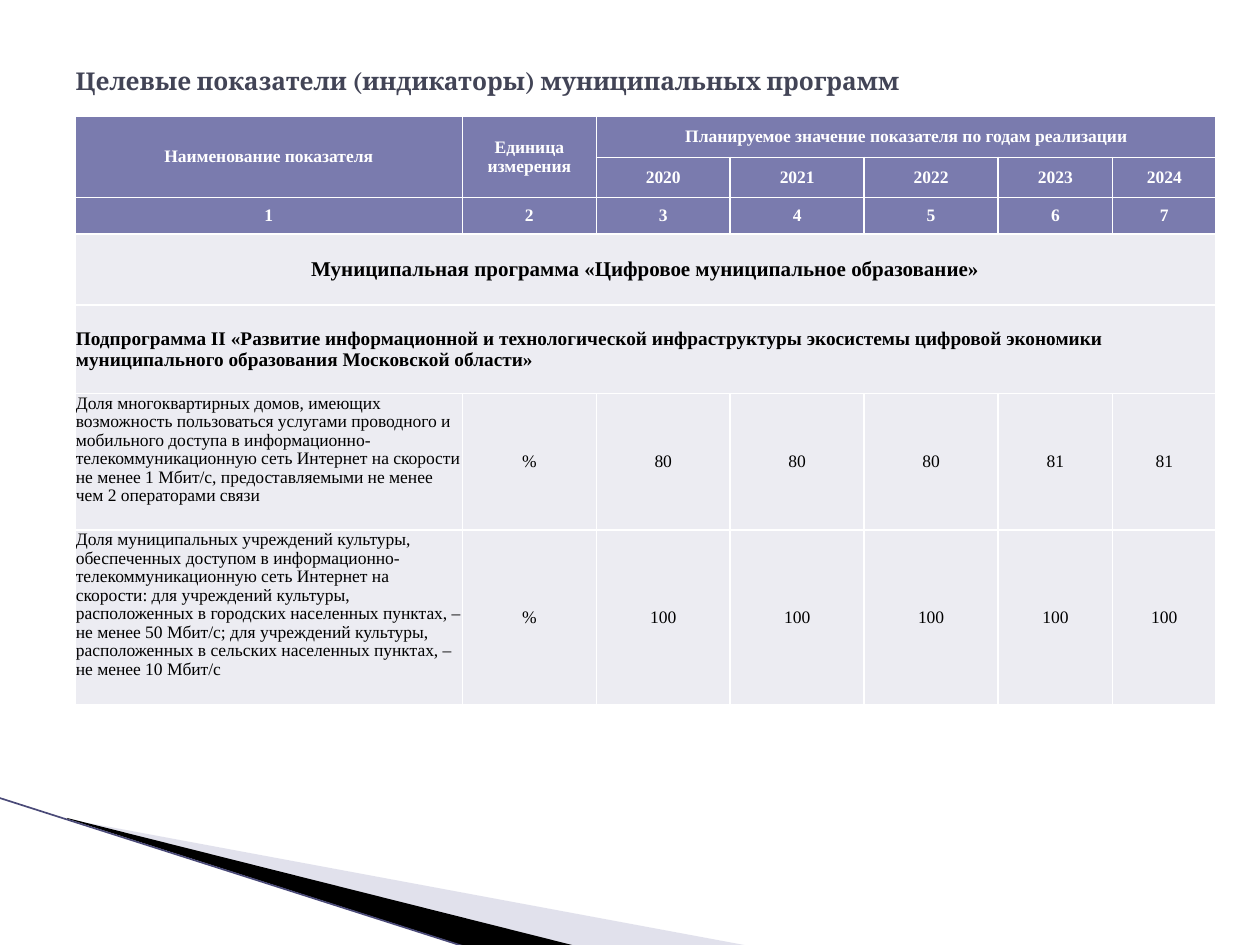
from lxml.etree import SubElement
from pptx import Presentation
from pptx.dml.color import RGBColor
from pptx.enum.shapes import MSO_CONNECTOR
from pptx.enum.text import MSO_ANCHOR as Anchor, MSO_AUTO_SIZE as AutoSize, PP_ALIGN as Align
from pptx.oxml import parse_xml
from pptx.oxml.ns import nsdecls, qn
from pptx.util import Cm, Pt

WHITE = RGBColor(0xFF, 0xFF, 0xFF)
BLACK = RGBColor(0x00, 0x00, 0x00)
TITLE_GREY = RGBColor(0x42, 0x44, 0x56)
HEADER_VIOLET = RGBColor(0x7A, 0x7B, 0xAE)
BODY_GREY = RGBColor(0xEC, 0xEC, 0xF2)
WEDGE_LILAC = RGBColor(0xB6, 0xB6, 0xD1)
EDGE_VIOLET = RGBColor(0x4A, 0x4A, 0x78)


def write(frame, text, size=10, face="Times New Roman", color=BLACK, bold=False,
          align=Align.LEFT, spacing=0.96):
    paragraph = frame.paragraphs[0]
    paragraph.alignment = align
    paragraph.line_spacing = spacing
    run = paragraph.add_run()
    run.text = text
    run.font.size = Pt(size)
    run.font.name = face
    run.font.bold = bold
    run.font.color.rgb = color


prs = Presentation()
prs.slide_width, prs.slide_height = Cm(25.4), Cm(19.05)
slide = prs.slides.add_slide(prs.slide_layouts[5])

wedges = [
    ([(1.4, 16.52), (15.11, 19.07), (11.58, 19.07)], WEDGE_LILAC, 40),
    ([(1.35, 16.49), (11.61, 19.07), (9.45, 19.1), (1.37, 16.51)], BLACK, 100),
]
for points, color, opacity in wedges:
    corners = [(Cm(x), Cm(y)) for x, y in points]
    outline = slide.shapes.build_freeform(*corners[0])
    outline.add_line_segments(corners[1:], close=True)
    wedge = outline.convert_to_shape()
    wedge.shadow.inherit = False
    wedge.fill.solid()
    wedge.fill.fore_color.rgb = color
    wedge.line.fill.background()
    if opacity < 100:
        tint = wedge.fill._xPr.find(qn("a:solidFill"))[0]
        SubElement(tint, qn("a:alpha"), val=str(opacity * 1000))

edge = slide.shapes.add_connector(
    MSO_CONNECTOR.STRAIGHT, Cm(-0.03), Cm(16.08), Cm(9.42), Cm(19.1))
edge.line.color.rgb = EDGE_VIOLET
edge.line.width = Pt(0.95)
SubElement(edge._element.spPr, qn("a:effectLst"))

title = slide.shapes.title
title.left, title.top, title.width, title.height = Cm(1.27), Cm(0.76), Cm(22.86), Cm(1.75)
title.text_frame.auto_size = AutoSize.NONE
title.text_frame.vertical_anchor = Anchor.MIDDLE
write(title.text_frame, "Целевые показатели (индикаторы) муниципальных программ",
      size=14, face="Cambria", color=TITLE_GREY, bold=True, spacing=1.0)

rows = [
    ["Наименование показателя", "Единица измерения",
     "Планируемое значение показателя по годам реализации", "", "", "", ""],
    ["", "", "2020", "2021", "2022", "2023", "2024"],
    ["1", "2", "3", "4", "5", "6", "7"],
    ["Муниципальная программа «Цифровое муниципальное образование»"] + [""] * 6,
    ["Подпрограмма II «Развитие информационной и технологической инфраструктуры "
     "экосистемы цифровой экономики муниципального образования Московской области»"]
    + [""] * 6,
    ["Доля многоквартирных домов, имеющих возможность пользоваться услугами проводного и "
     "мобильного доступа в информационно-телекоммуникационную сеть Интернет на скорости "
     "не менее 1 Мбит/с, предоставляемыми не менее чем 2 операторами связи",
     "%", "80", "80", "80", "81", "81"],
    ["Доля муниципальных учреждений культуры, обеспеченных доступом в "
     "информационно-телекоммуникационную сеть Интернет на скорости: для учреждений "
     "культуры, расположенных в городских населенных пунктах, – не менее 50 Мбит/с; для "
     "учреждений культуры, расположенных в сельских населенных пунктах, – не менее 10 Мбит/с",
     "%", "100", "100", "100", "100", "100"],
]
column_widths = [7.81, 2.7, 2.7, 2.7, 2.7, 2.31, 2.08]
row_heights = [0.83, 0.81, 0.74, 1.43, 1.78, 2.75, 3.52]
HEADER_ROWS, PROGRAM_ROW, SUBPROGRAM_ROW = 3, 3, 4

indicators = slide.shapes.add_table(
    len(rows), len(column_widths), Cm(1.51), Cm(2.34),
    Cm(sum(column_widths)), Cm(sum(row_heights))).table
for column, width in zip(indicators.columns, column_widths):
    column.width = Cm(width)
for row, height in zip(indicators.rows, row_heights):
    row.height = Cm(height)

merges = [((0, 0), (1, 0)), ((0, 1), (1, 1)), ((0, 2), (0, 6)),
          ((PROGRAM_ROW, 0), (PROGRAM_ROW, 6)), ((SUBPROGRAM_ROW, 0), (SUBPROGRAM_ROW, 6))]
for first, last in merges:
    indicators.cell(*first).merge(indicators.cell(*last))

for r, texts in enumerate(rows):
    header = r < HEADER_ROWS
    for c, text in enumerate(texts):
        cell = indicators.cell(r, c)
        description = r > SUBPROGRAM_ROW and c == 0
        cell.margin_left = cell.margin_right = cell.margin_top = Cm(0.02)
        cell.margin_bottom = Cm(0)
        cell.vertical_anchor = Anchor.TOP if description else Anchor.MIDDLE
        for position, side in enumerate(["lnL", "lnR", "lnT", "lnB"]):
            cell._tc.tcPr.insert(position, parse_xml(
                f'<a:{side} {nsdecls("a")} w="12700"><a:solidFill>'
                f'<a:srgbClr val="{WHITE}"/></a:solidFill></a:{side}>'))
        cell.fill.solid()
        cell.fill.fore_color.rgb = HEADER_VIOLET if header else BODY_GREY
        if text:
            write(cell.text_frame, text,
                  size={PROGRAM_ROW: 12, SUBPROGRAM_ROW: 11}.get(r, 10),
                  color=WHITE if header else BLACK,
                  bold=r <= SUBPROGRAM_ROW,
                  align=Align.LEFT if description or r == SUBPROGRAM_ROW else Align.CENTER)

prs.save("out.pptx")
